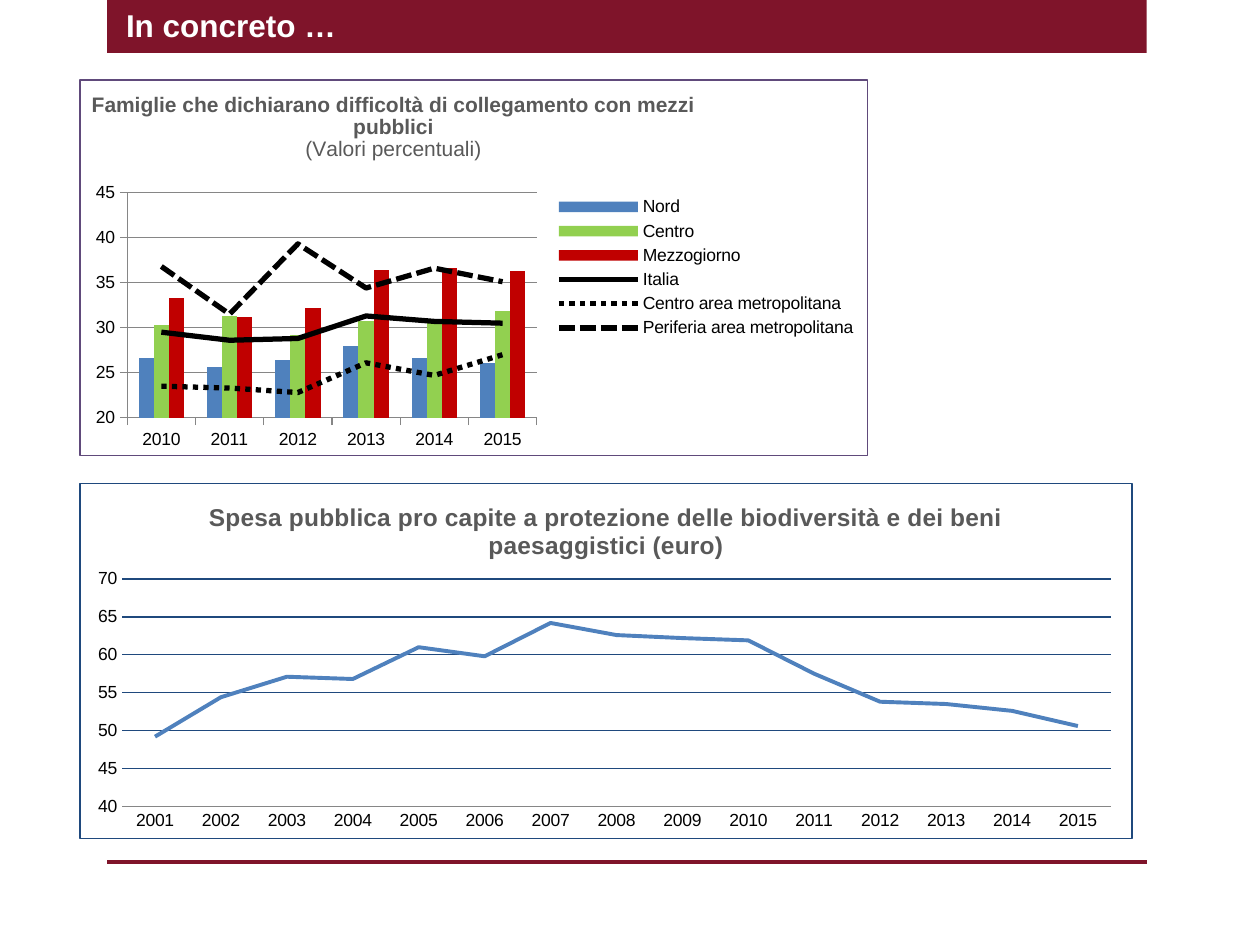
import pptx
import pptx.util
import pptx.oxml
import pptx.oxml.ns
from pptx.chart.data import CategoryChartData
from pptx.dml.color import RGBColor
from pptx.enum.chart import XL_CHART_TYPE, XL_LEGEND_POSITION, XL_MARKER_STYLE, XL_TICK_MARK
from pptx.enum.dml import MSO_LINE
from pptx.enum.shapes import MSO_CONNECTOR, MSO_SHAPE
from pptx.enum.text import MSO_ANCHOR, PP_ALIGN
from pptx.util import Inches, Pt

qn = pptx.oxml.ns.qn


class Theme:
    font = "Arial"
    brand, white, black = "7F142A", "FFFFFF", "000000"
    chart_title, axis = "595959", "868686"
    blue, green, red = "4F81BD", "92D050", "C00000"
    navy, purple = "1F497D", "604A7B"
    heading, large, medium, small = 18, 14, 12, 10


TRANSPORT = [
    ("Nord", (26.6, 25.6, 26.4, 28, 26.6, 26.1), Theme.blue),
    ("Centro", (30.3, 31.3, 29.2, 30.7, 30.7, 31.8), Theme.green),
    ("Mezzogiorno", (33.3, 31.2, 32.2, 36.4, 36.6, 36.3), Theme.red),
    ("Italia", (29.5, 28.6, 28.8, 31.3, 30.7, 30.5), MSO_LINE.SOLID),
    ("Centro area metropolitana", (23.5, 23.3, 22.8, 26.1, 24.7, 27), MSO_LINE.ROUND_DOT),
    ("Periferia area metropolitana", (36.8, 31.5, 39.3, 34.4, 36.6, 35.1), MSO_LINE.SQUARE_DOT),
]
SPENDING = (49.2, 54.4, 57.1, 56.8, 61, 59.8, 64.2, 62.6, 62.2, 61.9,
            57.5, 53.8, 53.5, 52.6, 50.6)


def format_font(font, size, color, bold=False):
    font.name, font.size, font.bold = Theme.font, Pt(size), bold
    font.color.rgb = RGBColor.from_string(color)


def write(p, text, size=Theme.small, color=Theme.black, bold=False, align=None):
    p.alignment = align
    r = p.add_run()
    r.text = text
    format_font(r.font, size, color, bold)


def set_line(line, color, width):
    line.color.rgb = RGBColor.from_string(color)
    line.width = Pt(width)


def place(element, x, y, w=None, h=None, inner=False):
    """Give a chart part a manual layout, in fractions of the chart."""
    for old in element.findall(qn("c:layout")):
        element.remove(old)
    target = '<c:layoutTarget val="inner"/>' if inner else ""
    modes = '<c:xMode val="edge"/><c:yMode val="edge"/>'
    sizes = "".join(f'<c:{k} val="{v}"/>' for k, v in zip("xywh", (x, y, w, h)) if v is not None)
    layout = pptx.oxml.parse_xml(
        f'<c:layout {pptx.oxml.ns.nsdecls("c")}><c:manualLayout>'
        f'{target}{modes}{sizes}</c:manualLayout></c:layout>')
    overlay = element.find(qn("c:overlay"))
    if overlay is None:
        element.insert(0, layout)
    else:
        overlay.addprevious(layout)


def add_border(chart, color):
    border = pptx.oxml.parse_xml(
        f'<c:spPr {pptx.oxml.ns.nsdecls("c", "a")}><a:noFill/><a:ln w="{Pt(0.75)}">'
        f'<a:solidFill><a:srgbClr val="{color}"/></a:solidFill></a:ln></c:spPr>')
    chart.element.find(qn("c:chart")).addnext(border)


def add_chart(s, kind, box, cats, series, title, border, plot_box):
    data = CategoryChartData()
    data.categories = cats
    for name, values in series:
        data.add_series(name, values)
    chart = s.shapes.add_chart(kind, *map(Inches, box), data).chart
    format_font(chart.font, Theme.small, Theme.black)
    tf = chart.chart_title.text_frame
    for i, (text, size, bold) in enumerate(title):
        p = tf.add_paragraph() if i else tf.paragraphs[0]
        write(p, text, size=size, color=Theme.chart_title, bold=bold)
    add_border(chart, border)
    place(chart.element.find(".//" + qn("c:plotArea")), *plot_box, inner=True)
    chart.has_legend = False
    return chart


def format_axes(chart, low, high, tick, grid):
    for axis in (chart.category_axis, chart.value_axis):
        axis.major_tick_mark = tick
        axis.minor_tick_mark = XL_TICK_MARK.NONE
        set_line(axis.format.line, Theme.axis, 0.75)
    axis = chart.value_axis
    axis.minimum_scale, axis.maximum_scale, axis.major_unit = low, high, 5
    axis.tick_labels.number_format = "0"
    axis.tick_labels.number_format_is_linked = False
    axis.has_major_gridlines = True
    set_line(axis.major_gridlines.format.line, grid, 0.75)


def format_line_series(series, color, width, dash=MSO_LINE.SOLID):
    set_line(series.format.line, color, width)
    series.format.line.dash_style = dash
    series.marker.style = XL_MARKER_STYLE.NONE
    series.smooth = False


def move_to_lines(chart, first):
    """Draw the column series from index first on as lines on the same axes."""
    bars = chart.element.find(".//" + qn("c:barChart"))
    axes = "".join(f'<c:axId val="{a.get("val")}"/>' for a in bars.findall(qn("c:axId")))
    lines = pptx.oxml.parse_xml(
        f'<c:lineChart {pptx.oxml.ns.nsdecls("c")}><c:grouping val="standard"/>'
        f'<c:varyColors val="0"/><c:marker val="1"/>{axes}</c:lineChart>')
    bars.addnext(lines)
    marker = lines.find(qn("c:marker"))
    for ser in bars.findall(qn("c:ser"))[first:]:
        for item in ser.findall(qn("c:invertIfNegative")):
            ser.remove(item)
        marker.addprevious(ser)


def add_frame(s):
    # Heading bar, behind the title placeholder
    bar = s.shapes.add_shape(MSO_SHAPE.RECTANGLE, *map(Inches, (0.85, 0, 8.25, 0.42)))
    bar.shadow.inherit = False
    bar.fill.solid()
    bar.fill.fore_color.rgb = RGBColor.from_string(Theme.brand)
    bar.line.fill.background()
    title = s.shapes.title
    title.element.addprevious(bar.element)
    # Footer rule
    rule = s.shapes.add_connector(MSO_CONNECTOR.STRAIGHT, *map(Inches, (0.85, 6.84, 9.1, 6.84)))
    set_line(rule.line, Theme.brand, 2)
    rule.element.spPr.append(
        pptx.oxml.parse_xml(f'<a:effectLst {pptx.oxml.ns.nsdecls("a")}/>'))
    # Title
    title.left, title.top, title.width, title.height = map(Inches, (0.9, 0, 8.21, 0.4))
    tf = title.text_frame
    tf.word_wrap, tf.vertical_anchor = True, MSO_ANCHOR.MIDDLE
    write(tf.paragraphs[0], "In concreto …", size=Theme.heading, color=Theme.white,
          bold=True, align=PP_ALIGN.LEFT)


def add_spending_chart(s):
    title = "Spesa pubblica pro capite a protezione delle biodiversità e dei beni paesaggistici (euro)"
    chart = add_chart(
        s, XL_CHART_TYPE.LINE_STACKED, (0.63, 3.83, 8.36, 2.83),
        [str(year) for year in range(2001, 2016)], [("Series 1", SPENDING)],
        [(title, Theme.large, True)], Theme.navy, (0.04, 0.27, 0.94, 0.64))
    format_axes(chart, 40, 70, XL_TICK_MARK.NONE, Theme.navy)
    chart.value_axis.format.line.fill.background()
    chart.plots[0].vary_by_categories = False
    format_line_series(chart.plots[0].series[0], Theme.blue, 2.25)


def add_transport_chart(s):
    title = [("Famiglie che dichiarano difficoltà di collegamento con mezzi pubblici",
              Theme.medium, True), ("(Valori percentuali)", Theme.medium, False)]
    chart = add_chart(
        s, XL_CHART_TYPE.COLUMN_CLUSTERED, (0.63, 0.63, 6.26, 2.99),
        [str(year) for year in range(2010, 2016)], [row[:2] for row in TRANSPORT],
        title, Theme.purple, (0.06, 0.3, 0.52, 0.6))
    place(chart.element.find(".//" + qn("c:title")), 0.01, 0.02)
    format_axes(chart, 20, 45, XL_TICK_MARK.OUTSIDE, Theme.axis)
    # Areas as columns, national and metropolitan values as lines
    move_to_lines(chart, 3)
    columns, lines = chart.plots
    columns.gap_width = 150
    columns.vary_by_categories = False
    for series, (_, _, color) in zip(columns.series, TRANSPORT[:3]):
        series.format.fill.solid()
        series.format.fill.fore_color.rgb = RGBColor.from_string(color)
    for series, (_, _, dash) in zip(lines.series, TRANSPORT[3:]):
        format_line_series(series, Theme.black, 3, dash)
    # Legend
    chart.has_legend = True
    chart.legend.position = XL_LEGEND_POSITION.RIGHT
    chart.legend.include_in_layout = False
    place(chart.legend._element, 0.6, 0.3, 0.39, 0.4)


def main():
    prs = pptx.Presentation()
    prs.slide_width, prs.slide_height = Inches(10), Inches(7.5)
    s = prs.slides.add_slide(prs.slide_layouts[5])
    add_frame(s)
    add_spending_chart(s)
    add_transport_chart(s)
    prs.save("out.pptx")


if __name__ == "__main__":
    main()
